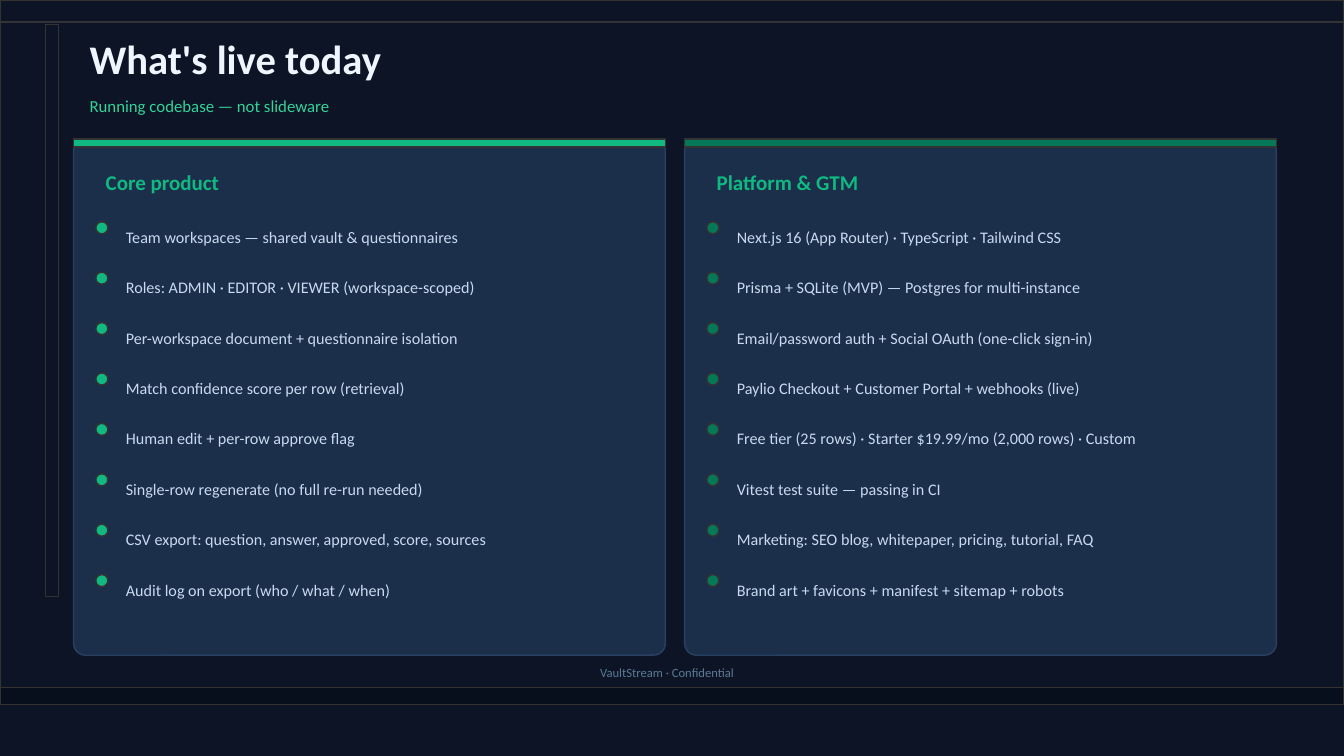
import pptx
import pptx.util
import pptx.dml.color
import pptx.enum.shapes
import pptx.enum.text

Inches = pptx.util.Inches
KIND = pptx.enum.shapes.MSO_SHAPE
ALIGN = pptx.enum.text.PP_ALIGN

GREEN, PINE = "10B981", "047857"
EDGE = "333333"
STEP = 0.5  # distance between list rows

CORE = [
    "Team workspaces — shared vault & questionnaires",
    "Roles: ADMIN · EDITOR · VIEWER (workspace-scoped)",
    "Per-workspace document + questionnaire isolation",
    "Match confidence score per row (retrieval)",
    "Human edit + per-row approve flag",
    "Single-row regenerate (no full re-run needed)",
    "CSV export: question, answer, approved, score, sources",
    "Audit log on export (who / what / when)",
]
GTM = [
    "Next.js 16 (App Router) · TypeScript · Tailwind CSS",
    "Prisma + SQLite (MVP) — Postgres for multi-instance",
    "Email/password auth + Social OAuth (one-click sign-in)",
    "Paylio Checkout + Customer Portal + webhooks (live)",
    "Free tier (25 rows) · Starter $19.99/mo (2,000 rows) · Custom",
    "Vitest test suite — passing in CI",
    "Marketing: SEO blog, whitepaper, pricing, tutorial, FAQ",
    "Brand art + favicons + manifest + sitemap + robots",
]


def color(code):
    return pptx.dml.color.RGBColor.from_string(code)


def shape(slide, kind, left, top, width, height, fill=None, line=EDGE):
    item = slide.shapes.add_shape(
        kind, Inches(left), Inches(top), Inches(width), Inches(height))
    item.shadow.inherit = False
    if fill:
        item.fill.solid()
        item.fill.fore_color.rgb = color(fill)
    else:
        item.fill.background()
    item.line.color.rgb = color(line)
    item.line.width = pptx.util.Pt(1)
    return item


def label(slide, text, left, top, width, height, size, tint,
          bold=False, align=ALIGN.LEFT):
    box = slide.shapes.add_textbox(
        Inches(left), Inches(top), Inches(width), Inches(height))
    frame = box.text_frame
    frame.word_wrap = True
    frame.vertical_anchor = pptx.enum.text.MSO_ANCHOR.MIDDLE
    frame.text = text
    line = frame.paragraphs[0]
    line.alignment = align
    font = line.runs[0].font
    font.name = "Calibri"
    font.size = pptx.util.Pt(size)
    font.bold = bold
    font.color.rgb = color(tint)


def panel(slide, left, accent):
    card = shape(slide, KIND.ROUNDED_RECTANGLE, left, 1.38, 5.87, 5.12,
                 "1C2F4A", "2A4060")
    card.adjustments[0] = 0.023
    shape(slide, KIND.RECTANGLE, left, 1.38, 5.87, 0.08, accent)


def points(slide, left, title, items, accent):
    label(slide, title, left, 1.6, 5.42, 0.42, 15, GREEN, bold=True)
    for row, text in enumerate(items):
        top = 2.2 + row * STEP
        shape(slide, KIND.OVAL, left, top, 0.12, 0.12, accent)
        label(slide, text, left + 0.2, top - 0.06, 5.26, 0.42, 11.5, "C8DAF0")


def main():
    deck = pptx.Presentation()
    deck.slide_width = Inches(13.33)
    deck.slide_height = Inches(7.5)
    slide = deck.slides.add_slide(deck.slide_layouts[6])
    slide.background.fill.solid()
    slide.background.fill.fore_color.rgb = color("0D1425")

    # Outline frames
    shape(slide, KIND.RECTANGLE, 0, 0, 13.33, 6.99)
    shape(slide, KIND.RECTANGLE, 0, 0, 13.33, 0.22)
    shape(slide, KIND.RECTANGLE, 0.45, 0.24, 0.13, 5.68)

    # Heading
    label(slide, "What's live today", 0.79, 0.27, 11.65, 0.62, 29, "F0F6FF",
          bold=True)
    label(slide, "Running codebase — not slideware", 0.79, 0.87, 7.64, 0.36,
          12, "34D399")

    # Two feature columns
    columns = [(0.73, "Core product", CORE, GREEN),
               (6.79, "Platform & GTM", GTM, PINE)]
    for left, title, items, accent in columns:
        panel(slide, left, accent)
        points(slide, left + 0.22, title, items, accent)

    # Footer
    shape(slide, KIND.RECTANGLE, 0, 6.82, 13.33, 0.17, "080F1C")
    label(slide, "VaultStream · Confidential", 0.45, 6.52, 12.33, 0.3, 9,
          "5A7A94", align=ALIGN.CENTER)

    deck.save("out.pptx")


if __name__ == "__main__":
    main()
